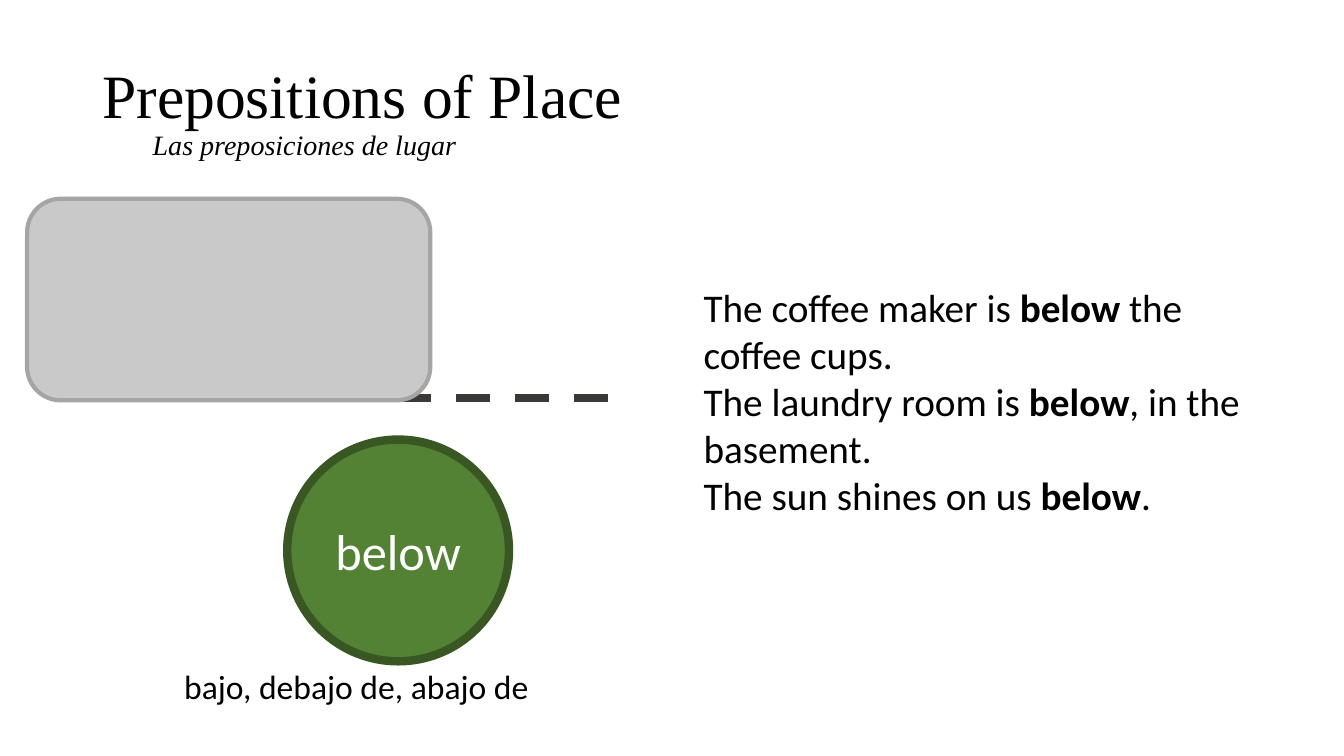
import dataclasses

import pptx
import pptx.dml.color
import pptx.enum.dml
import pptx.enum.shapes
import pptx.enum.text
import pptx.oxml.ns
import pptx.util
from lxml import etree

Pt = pptx.util.Pt
SHAPES = pptx.enum.shapes.MSO_SHAPE
ALIGN = pptx.enum.text.PP_ALIGN
ANCHOR = pptx.enum.text.MSO_ANCHOR


@dataclasses.dataclass(frozen=True)
class Theme:
    heading_font: str = "Times New Roman"
    body_font: str = "Calibri"
    text: str = "000000"
    light_text: str = "FFFFFF"
    dash: str = "3B3838"
    block_fill: str = "C9C9C9"
    block_line: str = "A5A5A5"
    ball_fill: str = "548235"
    ball_line: str = "385723"
    title_size: int = 44
    subtitle_size: int = 20
    ball_size: int = 36
    caption_size: int = 24
    example_size: int = 28


THEME = Theme()


def rgb(value):
    return pptx.dml.color.RGBColor.from_string(value)


def add_run(paragraph, text, size, color=THEME.text, **formats):
    run = paragraph.add_run()
    run.text = text
    values = {"name": THEME.body_font, "size": Pt(size), **formats}
    for name, value in values.items():
        setattr(run.font, name, value)
    run.font.color.rgb = rgb(color)


def add_text_box(slide, box, **formats):
    frame = slide.shapes.add_textbox(*map(Pt, box)).text_frame
    for name, value in {"word_wrap": True, **formats}.items():
        setattr(frame, name, value)
    return frame


def add_outlined_shape(slide, kind, box, fill, line, width):
    shape = slide.shapes.add_shape(kind, *map(Pt, box))
    shape.shadow.inherit = False
    shape.fill.solid()
    shape.fill.fore_color.rgb = rgb(fill)
    shape.line.color.rgb = rgb(line)
    shape.line.width = Pt(width)
    return shape


def add_heading(slide, box, title, subtitle):
    frame = add_text_box(slide, box, vertical_anchor=ANCHOR.MIDDLE)
    paragraph = frame.paragraphs[0]
    paragraph.line_spacing = 0.9
    add_run(paragraph, title, THEME.title_size, name=THEME.heading_font)
    paragraph.add_line_break()
    # A tab sets the subtitle in under the title
    add_run(paragraph, "\t" + subtitle, THEME.subtitle_size,
            name=THEME.heading_font, italic=True)


def add_diagram(slide, box, word, translation):
    left, top, width, height = box
    block_width, block_height, ball = 288, 144, 158.4
    ball_left, ball_top = left + 185.8, top + 172

    # Dashed level line, behind the block
    level = Pt(top + 142.5)
    line = slide.shapes.add_connector(
        pptx.enum.shapes.MSO_CONNECTOR.STRAIGHT,
        Pt(left + 222.5), level, Pt(left + width), level)
    line.line.color.rgb = rgb(THEME.dash)
    line.line.width = Pt(6)
    line.line.dash_style = pptx.enum.dml.MSO_LINE.DASH
    etree.SubElement(line._element.spPr, pptx.oxml.ns.qn("a:effectLst"))

    # Block above, ball below
    add_outlined_shape(slide, SHAPES.ROUNDED_RECTANGLE,
                       (left, top, block_width, block_height),
                       THEME.block_fill, THEME.block_line, 3)
    circle = add_outlined_shape(slide, SHAPES.OVAL,
                                (ball_left, ball_top, ball, ball),
                                THEME.ball_fill, THEME.ball_line, 6)
    circle.text_frame.vertical_anchor = ANCHOR.MIDDLE
    label = circle.text_frame.paragraphs[0]
    label.alignment = ALIGN.CENTER
    add_run(label, word, THEME.ball_size, THEME.light_text)

    # Translation under the ball
    caption_top = ball_top + ball
    caption = add_text_box(
        slide, (left + 103.7, caption_top, 262.8, top + height - caption_top),
        word_wrap=False).paragraphs[0]
    caption.alignment = ALIGN.CENTER
    add_run(caption, translation, THEME.caption_size)


def add_examples(slide, box, word, sentences):
    frame = add_text_box(slide, box)
    for index, (before, after) in enumerate(sentences):
        paragraph = frame.add_paragraph() if index else frame.paragraphs[0]
        add_run(paragraph, before, THEME.example_size)
        add_run(paragraph, word, THEME.example_size, bold=True)
        add_run(paragraph, after, THEME.example_size)


def main():
    presentation = pptx.Presentation()
    presentation.slide_width, presentation.slide_height = Pt(960), Pt(540)
    slide = presentation.slides.add_slide(presentation.slide_layouts[6])

    add_heading(slide, (66, 28.75, 828, 104.4),
                "Prepositions of Place", "Las preposiciones de lugar")
    add_diagram(slide, (19.4, 142, 426.3, 366.4),
                "below", "bajo, debajo de, abajo de")
    add_examples(slide, (495.5, 198.7, 398, 177), "below", [
        ("The coffee maker is ", " the coffee cups."),
        ("The laundry room is ", ", in the basement."),
        ("The sun shines on us ", "."),
    ])
    presentation.save("out.pptx")


if __name__ == "__main__":
    main()
